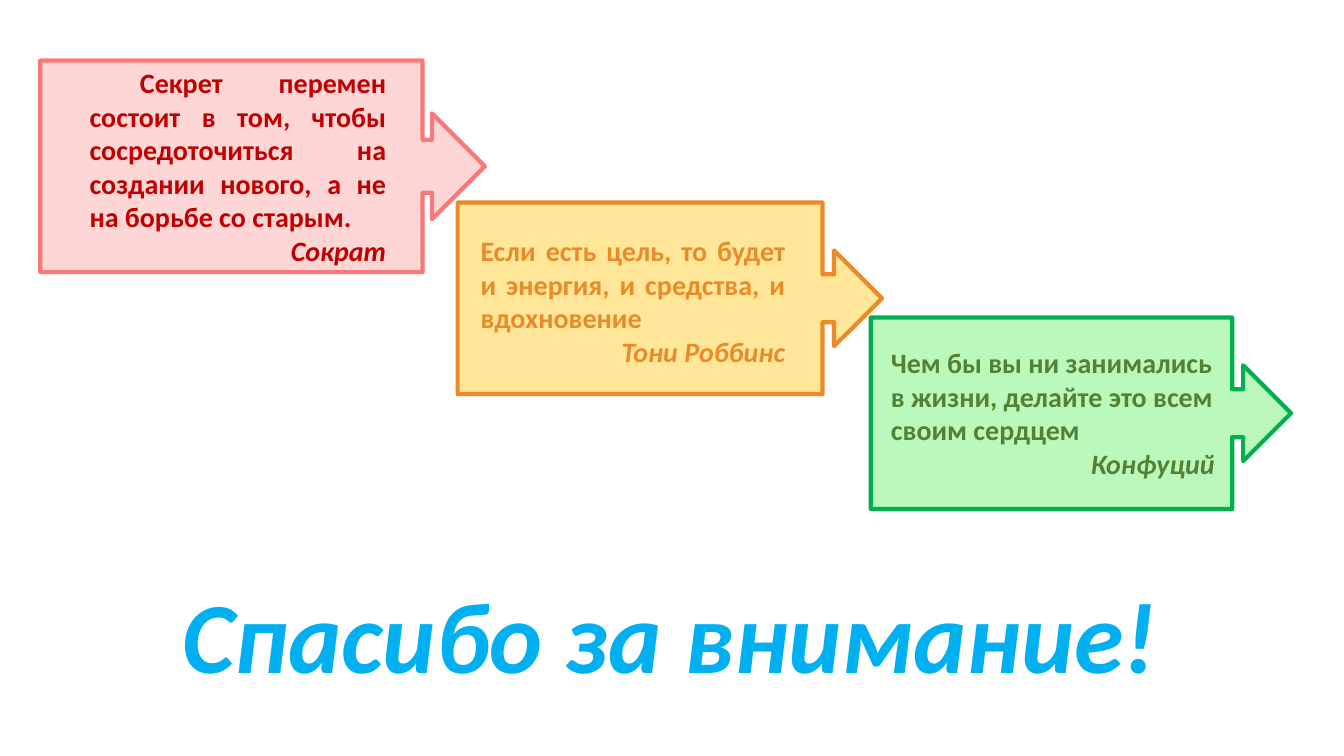
import pptx
import pptx.util
import pptx.dml.color
import pptx.enum.shapes
import pptx.enum.text

Pt = pptx.util.Pt
Align = pptx.enum.text.PP_ALIGN

theme = {
    "font": "Calibri",
    "quote": 20,
    "thanks": 72,
    "blue": "00B0F0",
    "green": {"fill": "BAF8BB", "line": "00B050", "text": "548235"},
    "orange": {"fill": "FFE699", "line": "EB8A29", "text": "EB8A29"},
    "red": {"fill": "FED6D6", "line": "FC7878", "text": "C00000"},
}

quotes = [
    ("green", (622, 226.8, 300.2, 136.8), (629.3, 243.4, 245.5, 104.4),
     "Чем бы вы ни занимались в жизни, делайте это всем своим сердцем",
     "Конфуций", Align.LEFT, 0),
    ("orange", (326.9, 144.7, 303.1, 136.8), (336.2, 163.4, 231.8, 126),
     "Если есть цель, то будет и энергия, и средства, и вдохновение",
     "Тони Роббинс", Align.JUSTIFY, 0),
    ("red", (28.8, 43.2, 317.5, 151.2), (56.9, 43.2, 226.1, 174.2),
     "Секрет перемен состоит в том, чтобы сосредоточиться на создании нового, а не на борьбе со старым.",
     "Сократ", Align.JUSTIFY, 36),
]


def rgb(name):
    return pptx.dml.color.RGBColor.from_string(name)


def write(box, lines, size, color):
    area = slide.shapes.add_textbox(*map(Pt, box))
    frame = area.text_frame
    frame.word_wrap = True
    frame.text = "\n".join(text for text, align, slant in lines)
    for para, (text, align, slant) in zip(frame.paragraphs, lines):
        para.alignment = align
        para.font.name = theme["font"]
        para.font.size = Pt(size)
        para.font.bold = True
        para.font.italic = slant
        para.font.color.rgb = rgb(color)
    return frame


deck = pptx.Presentation()
deck.slide_width = Pt(960)
deck.slide_height = Pt(540)
slide = deck.slides.add_slide(deck.slide_layouts[6])

for tone, box, area, quote, author, align, indent in quotes:
    arrow = slide.shapes.add_shape(
        pptx.enum.shapes.MSO_SHAPE.RIGHT_ARROW_CALLOUT, *map(Pt, box))
    arrow.shadow.inherit = False
    for index, value in enumerate((0.25, 0.25, 0.25, 0.86)):
        arrow.adjustments[index] = value
    arrow.fill.solid()
    arrow.fill.fore_color.rgb = rgb(theme[tone]["fill"])
    arrow.line.color.rgb = rgb(theme[tone]["line"])
    arrow.line.width = Pt(3)

for tone, box, area, quote, author, align, indent in quotes:
    lines = [(quote, align, False), (author, Align.RIGHT, True)]
    frame = write(area, lines, theme["quote"], theme[tone]["text"])
    if indent:
        frame.paragraphs[0]._p.get_or_add_pPr().set("indent", str(Pt(indent)))

write((95.8, 405.4, 765.4, 94.3),
      [("Спасибо за внимание!", Align.CENTER, True)],
      theme["thanks"], theme["blue"])

deck.save("out.pptx")
